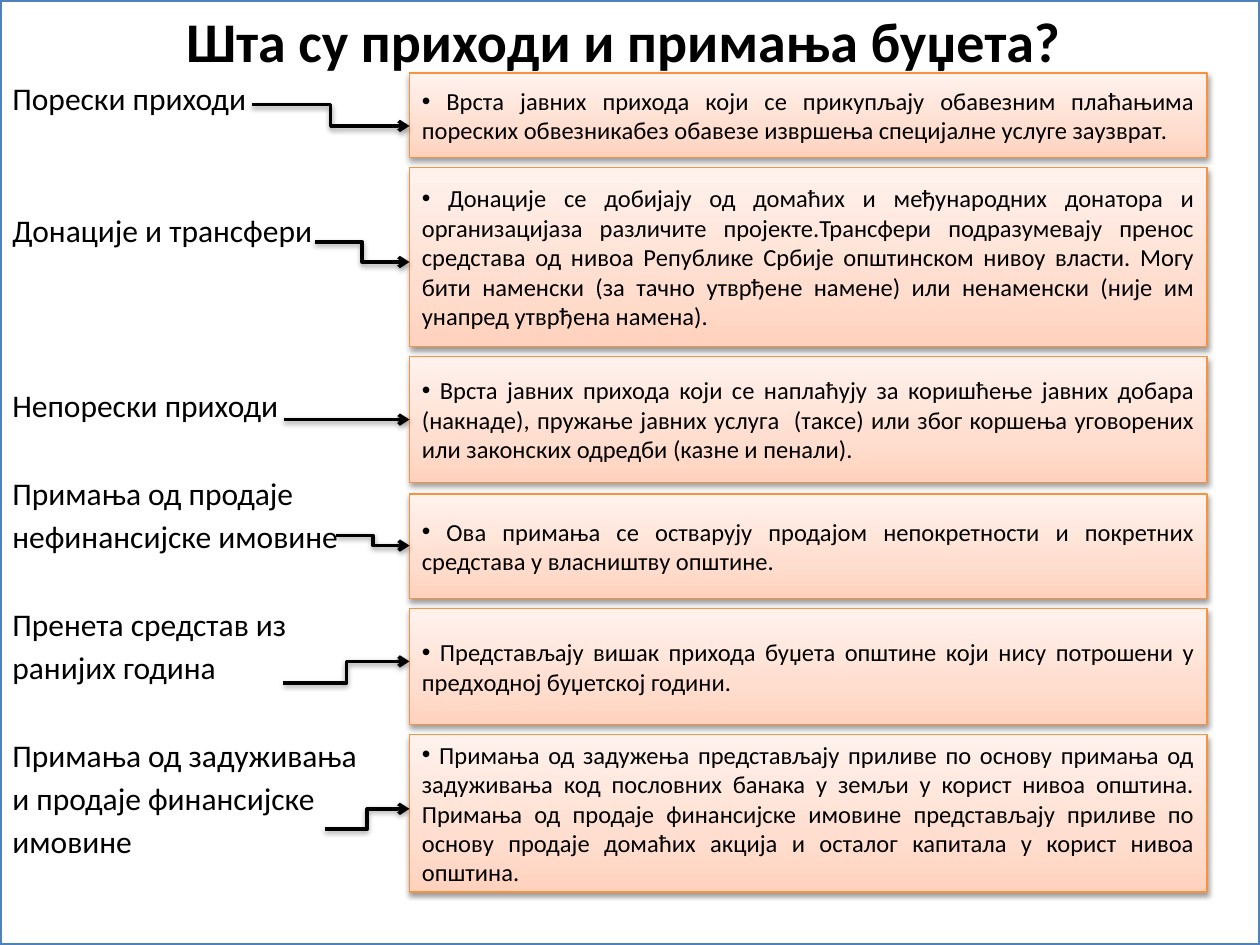
from copy import deepcopy

from lxml.etree import SubElement
from pptx import Presentation
from pptx.dml.color import RGBColor
from pptx.enum.shapes import MSO_CONNECTOR, MSO_SHAPE
from pptx.enum.text import MSO_ANCHOR, PP_ALIGN
from pptx.oxml.ns import qn
from pptx.util import Inches, Pt

BLACK = RGBColor(0x00, 0x00, 0x00)
WHITE = RGBColor(0xFF, 0xFF, 0xFF)
BLUE = RGBColor(0x4F, 0x81, 0xBD)
ORANGE = RGBColor(0xF6, 0x92, 0x40)
PEACH_STOPS = [
    (0, RGBColor(0xFF, 0xD2, 0xBD)),
    (0.35, RGBColor(0xFF, 0xDE, 0xD0)),
    (1, RGBColor(0xFF, 0xF2, 0xED)),
]

FONT = "Calibri"
LINE_GAP = 3.2
LINE_PITCH = 25.2
BOX_LEFT, BOX_WIDTH = 3.25, 6.33

TITLE = "Шта су приходи и примања буџета? "
LABELS = [
    (0, ["Порески приходи"]),
    (2, ["Донације и трансфери"]),
    (3, ["Непорески приходи"]),
    (1, ["Примања од продаје", "нефинансијске имовине"]),
    (1, ["Пренета средстав из", "ранијих година"]),
    (1, ["Примања од задуживања", "и продаје финансијске", "имовине"]),
]
BOXES = [
    (0.58, 0.67, "Врста јавних прихода који се прикупљају обавезним плаћањима "
     "пореских обвезникабез обавезе извршења специјалне услуге заузврат."),
    (1.33, 1.42, "Донације се добијају од домаћих и међународних донатора и "
     "организацијаза различите пројекте.Трансфери подразумевају пренос средстава "
     "од нивоа Републике Србије општинском нивоу власти. Могу бити наменски (за "
     "тачно утврђене намене) или ненаменски (није им унапред утврђена намена)."),
    (2.83, 1, "Врста јавних прихода који се наплаћују за коришћење јавних добара "
     "(накнаде), пружање јавних услуга  (таксе) или због коршења уговорених или "
     "законских одредби (казне и пенали)."),
    (3.92, 0.83, "Ова примања се остварују продајом непокретности и покретних "
     "средстава у власништву општине."),
    (4.83, 0.92, "Представљају вишак прихода буџета општине који нису потрошени у "
     "предходној буџетској години."),
    (5.83, 1.25, "Примања од задужења представљају приливе по основу примања од "
     "задуживања код пословних банака у земљи у корист нивоа општина. Примања од "
     "продаје финансијске имовине представљају приливе по основу продаје домаћих "
     "акција и осталог капитала у корист нивоа општина."),
]
ARROWS = [
    (2, 0.83, 1),
    (2.5, 1.92, 2.08),
    (2.25, 3.33, 3.33),
    (2.67, 4.25, 4.33),
    (2.25, 5.42, 5.25),
    (2.58, 6.58, 6.42),
]


def format_text(p, size, align, bold=False):
    """Set the alignment of a paragraph and the font of its runs."""
    p.alignment = align
    for r in p.runs:
        r.font.name = FONT
        r.font.size = Pt(size)
        r.font.bold = bold
        r.font.color.rgb = BLACK


def add_soft_shadow(effects):
    """Put a soft downward shadow in an effect list."""
    shadow = SubElement(effects, qn("a:outerShdw"), blurRad="40000",
                        dist="20000", dir="5400000", rotWithShape="0")
    color = SubElement(shadow, qn("a:srgbClr"), val="000000")
    SubElement(color, qn("a:alpha"), val="38000")


def add_label_panel(s, left, top, width, height):
    """Add the framed panel with the title and the revenue labels."""
    sp = s.shapes.add_shape(MSO_SHAPE.RECTANGLE, left, top, width, height)
    sp.shadow.inherit = False
    sp.fill.solid()
    sp.fill.fore_color.rgb = WHITE
    sp.line.color.rgb = BLUE
    sp.line.width = Pt(2)
    tf = sp.text_frame
    tf.word_wrap = True
    tf.vertical_anchor = MSO_ANCHOR.TOP
    tf.text = TITLE
    format_text(tf.paragraphs[0], 32, PP_ALIGN.CENTER, bold=True)
    for skipped, lines in LABELS:
        for i, line in enumerate(lines):
            p = tf.add_paragraph()
            p.text = line
            p.space_before = Pt(LINE_GAP + (0 if i else skipped * LINE_PITCH))
            format_text(p, 18, PP_ALIGN.LEFT)


def add_description(s, left, top, width, height, text):
    """Add a shaded box with one bulleted, justified description."""
    sp = s.shapes.add_shape(MSO_SHAPE.RECTANGLE, left, top, width, height)
    sp.fill.gradient()
    sp.fill.gradient_angle = 90
    stops = sp.element.spPr.find(".//" + qn("a:gsLst"))
    stops.append(deepcopy(stops[0]))
    for stop, (position, color) in zip(sp.fill.gradient_stops, PEACH_STOPS):
        stop.position = position
        stop.color.rgb = color
    sp.line.color.rgb = ORANGE
    sp.line.width = Pt(0.75)
    sp.shadow.inherit = False
    add_soft_shadow(sp.element.spPr.find(qn("a:effectLst")))
    tf = sp.text_frame
    tf.word_wrap = True
    tf.vertical_anchor = MSO_ANCHOR.MIDDLE
    tf.text = " " + text
    p = tf.paragraphs[0]
    format_text(p, 14, PP_ALIGN.JUSTIFY)
    pPr = p._p.get_or_add_pPr()
    SubElement(pPr, qn("a:buFont"), typeface="Arial")
    SubElement(pPr, qn("a:buChar"), char="•")
    return sp


def add_arrow(s, x1, y1, x2, y2, box):
    """Add an arrow to a box, bent where its ends differ in height."""
    kind = MSO_CONNECTOR.STRAIGHT if y1 == y2 else MSO_CONNECTOR.ELBOW
    cx = s.shapes.add_connector(kind, x1, y1, x2, y2)
    if kind == MSO_CONNECTOR.STRAIGHT:
        cx.end_connect(box, 1)
    cx.line.color.rgb = BLACK
    cx.line.width = Pt(2)
    spPr = cx._element.spPr
    SubElement(spPr.find(qn("a:ln")), qn("a:tailEnd"), type="arrow")
    add_soft_shadow(SubElement(spPr, qn("a:effectLst")))


def main():
    """Build the slide and save it."""
    prs = Presentation()
    prs.slide_width, prs.slide_height = Inches(10), Inches(7.5)
    s = prs.slides.add_slide(prs.slide_layouts[6])
    add_label_panel(s, 0, 0, prs.slide_width, prs.slide_height)
    boxes = [
        add_description(s, Inches(BOX_LEFT), Inches(top), Inches(BOX_WIDTH),
                        Inches(height), text)
        for top, height, text in BOXES
    ]
    for box, (x, y1, y2) in zip(boxes, ARROWS):
        add_arrow(s, Inches(x), Inches(y1), box.left, Inches(y2), box)
    prs.save("out.pptx")


if __name__ == "__main__":
    main()
